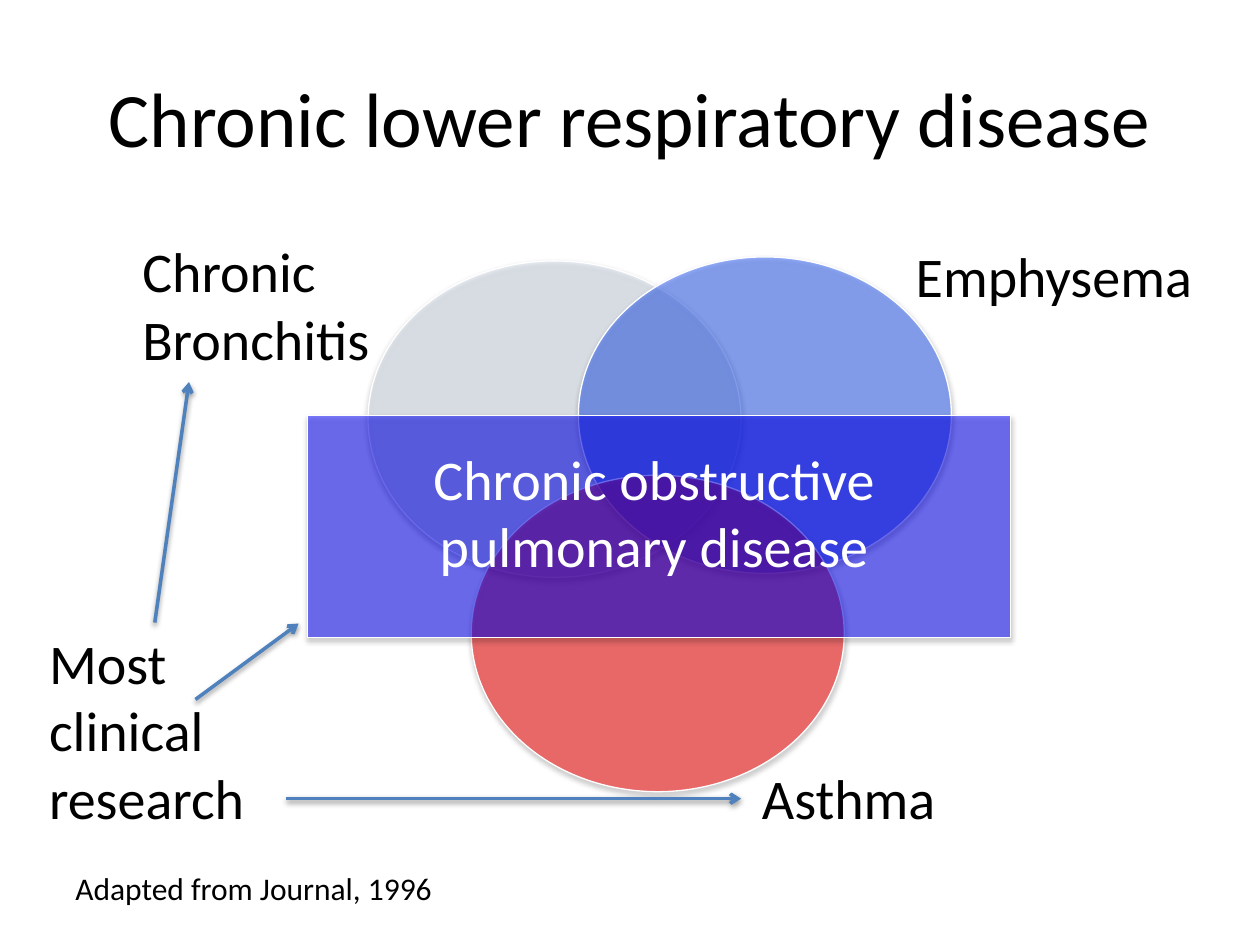
from lxml.etree import SubElement
from pptx import Presentation
from pptx.dml.color import RGBColor
from pptx.enum.shapes import MSO_CONNECTOR, MSO_SHAPE
from pptx.enum.text import MSO_ANCHOR, MSO_AUTO_SIZE, PP_ALIGN
from pptx.oxml.ns import qn
from pptx.util import Cm, Pt

BLACK = RGBColor(0x00, 0x00, 0x00)
WHITE = RGBColor(0xFF, 0xFF, 0xFF)
PALE_BLUE = RGBColor(0xDC, 0xE6, 0xF2)
SKY_BLUE = RGBColor(0x33, 0x66, 0xFF)
RED = RGBColor(0xFF, 0x00, 0x00)
BLUE = RGBColor(0x00, 0x00, 0xFF)
ARROW_BLUE = RGBColor(0x4F, 0x81, 0xBD)

CIRCLE_SIZE = (7.52, 6.38)


class Deck:
    font = "Calibri"

    def __init__(self):
        self.prs = Presentation()
        self.prs.slide_width, self.prs.slide_height = Cm(25.4), Cm(19.05)
        self.s = self.prs.slides.add_slide(self.prs.slide_layouts[5])

    def style(self, p, size, color, align):
        p.alignment = align
        p.font.name = self.font
        p.font.size = Pt(size)
        p.font.color.rgb = color

    def shadow(self, sp, opacity, distance):
        """Give the shape a soft black shadow straight below it."""
        effects = SubElement(sp._element.spPr, qn("a:effectLst"))
        outer = SubElement(effects, qn("a:outerShdw"), blurRad=str(Pt(3.1)),
                           dist=str(Pt(distance)), dir="5400000", rotWithShape="0")
        black = SubElement(outer, qn("a:srgbClr"), val=str(BLACK))
        SubElement(black, qn("a:alpha"), val=str(opacity * 1000))

    def title(self, text, x, y, w, h):
        sp = self.s.shapes.title
        sp.left, sp.top, sp.width, sp.height = Cm(x), Cm(y), Cm(w), Cm(h)
        tf = sp.text_frame
        tf.text = text
        tf.vertical_anchor = MSO_ANCHOR.MIDDLE
        self.style(tf.paragraphs[0], 44, BLACK, PP_ALIGN.CENTER)

    def area(self, kind, x, y, w, h, color):
        """Draw a half-transparent shape."""
        sp = self.s.shapes.add_shape(kind, Cm(x), Cm(y), Cm(w), Cm(h))
        sp.fill.solid()
        sp.fill.fore_color.rgb = color
        rgb = sp._element.spPr.find(qn("a:solidFill")).find(qn("a:srgbClr"))
        SubElement(rgb, qn("a:alpha"), val="50000")
        sp.line.color.rgb = WHITE
        sp.line.width = Pt(0.75)
        self.shadow(sp, 35, 1.8)

    def label(self, text, x, y, w, h, size=32, color=BLACK,
              align=PP_ALIGN.LEFT, wrap=True):
        tf = self.s.shapes.add_textbox(Cm(x), Cm(y), Cm(w), Cm(h)).text_frame
        tf.word_wrap = wrap
        tf.auto_size = MSO_AUTO_SIZE.SHAPE_TO_FIT_TEXT
        tf.text = text
        self.style(tf.paragraphs[0], size, color, align)

    def arrow(self, x1, y1, x2, y2):
        c = self.s.shapes.add_connector(MSO_CONNECTOR.STRAIGHT,
                                        Cm(x1), Cm(y1), Cm(x2), Cm(y2))
        c.line.color.rgb = ARROW_BLUE
        c.line.width = Pt(2)
        SubElement(c.line._get_or_add_ln(), qn("a:tailEnd"), type="arrow")
        self.shadow(c, 38, 1.6)


def main():
    deck = Deck()
    deck.title("Chronic lower respiratory disease", 1.27, 0.76, 22.86, 3.18)

    for x, y, color in ((7.42, 5.26, PALE_BLUE), (11.66, 5.18, SKY_BLUE), (9.5, 9.58, RED)):
        deck.area(MSO_SHAPE.OVAL, x, y, *CIRCLE_SIZE, color)
    deck.area(MSO_SHAPE.RECTANGLE, 6.2, 8.38, 14.17, 4.47, BLUE)

    deck.label("Adapted from Journal, 1996", 1.27, 17.4, 8.05, 1.02, size=18, wrap=False)
    deck.label("Emphysema", 18.21, 4.75, 6.17, 1.63, wrap=False)
    deck.label("Asthma", 15.11, 15.27, 4.06, 1.63, wrap=False)
    deck.label("Chronic Bronchitis", 2.62, 4.65, 5.41, 3.05)
    deck.label("Chronic obstructive pulmonary disease", 8.15, 8.84, 10.08, 3,
               color=WHITE, align=PP_ALIGN.CENTER)
    deck.label("Most clinical research", 0.74, 12.55, 4.8, 4.37)

    deck.arrow(3.12, 12.55, 3.81, 7.7)
    deck.arrow(3.94, 14.1, 6.02, 12.57)
    deck.arrow(5.77, 16.1, 14.94, 16.1)

    deck.prs.save("out.pptx")


if __name__ == "__main__":
    main()
